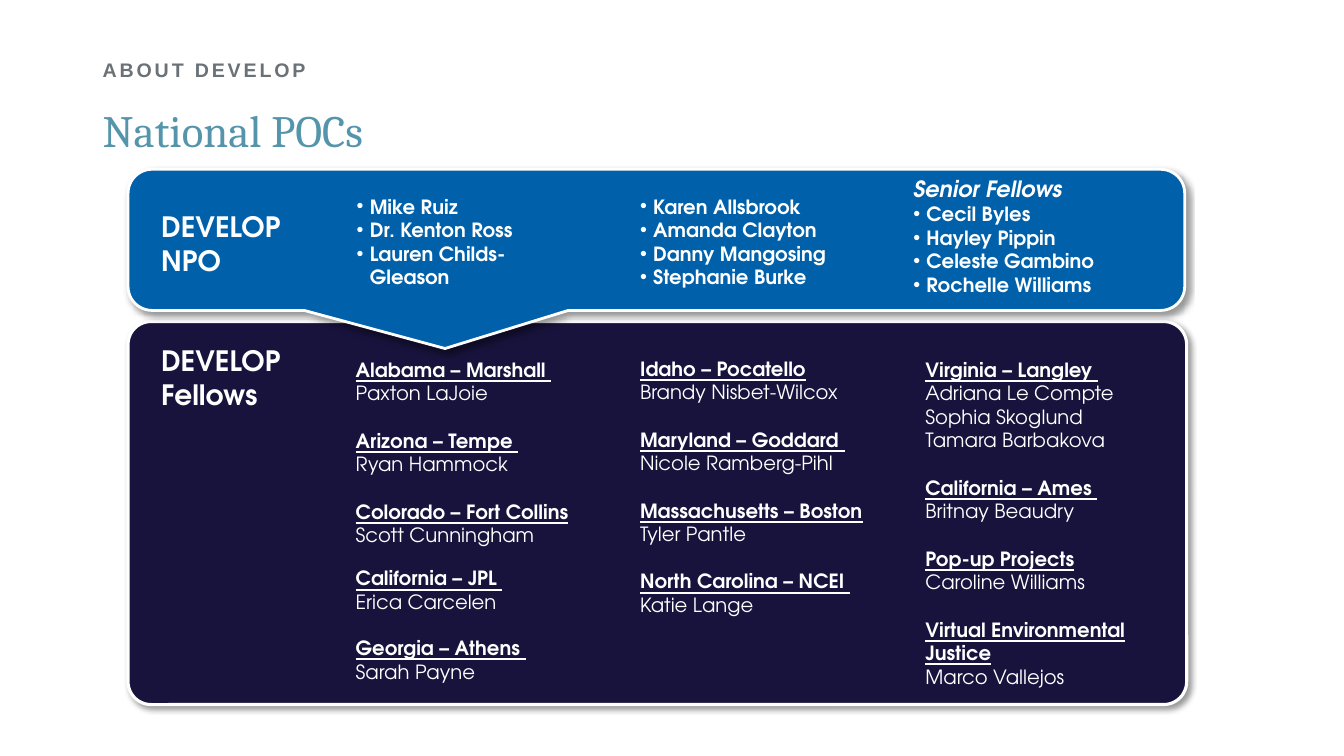
"""Build the slide of national points of contact."""
import pptx
import pptx.util
import pptx.dml.color
import pptx.enum.shapes
import pptx.enum.text
import pptx.oxml
import pptx.oxml.ns

Inches, Pt = pptx.util.Inches, pptx.util.Pt
RGB = pptx.dml.color.RGBColor.from_string
KIND = pptx.enum.shapes.MSO_SHAPE
ANCHOR = pptx.enum.text.MSO_ANCHOR
GROW = pptx.enum.text.MSO_AUTO_SIZE.SHAPE_TO_FIT_TEXT
SPACE = pptx.oxml.ns.nsdecls("a")

THEME = {
    "white": RGB("FFFFFF"), "blue": RGB("0061AA"), "navy": RGB("18133C"),
    "grey": RGB("6A7278"), "teal": RGB("5595AC"), "shade": "000000",
    "face": "TeX Gyre Adventor", "body": Pt(14), "gap": Pt(17),
}
NAME = {"name": THEME["face"], "size": THEME["body"], "bold": False}
BOLD = {**NAME, "bold": True}
HEAD = {**BOLD, "underline": True}
SENIOR = {**BOLD, "size": Pt(16), "italic": True}
LABEL = {**BOLD, "size": Pt(20)}
TOPIC = {"name": "Arial", "size": Pt(14), "bold": True}
TITLE = {"name": "Cambria", "size": Pt(32)}

deck = pptx.Presentation()
deck.slide_width, deck.slide_height = Inches(13.33), Inches(7.5)
slide = deck.slides.add_slide(deck.slide_layouts[6])


def write(place, lines, color=THEME["white"], anchor=ANCHOR.TOP):
    """Add a text box from lines of text, format, space before and bullet."""
    frame = slide.shapes.add_textbox(*map(Inches, place)).text_frame
    frame.word_wrap = True
    frame.vertical_anchor = anchor
    if anchor == ANCHOR.TOP:
        frame.auto_size = GROW
    for spot, (text, style, gap, mark) in enumerate(lines):
        para = frame.paragraphs[0] if spot == 0 else frame.add_paragraph()
        if gap:
            para.space_before = gap
        if mark:
            props = para._p.get_or_add_pPr()
            props.set("marL", str(Inches(0.13)))
            props.set("indent", str(-Inches(0.13)))
            for tag in ('buFont {} typeface="Arial"', 'buChar {} char="•"'):
                props.append(pptx.oxml.parse_xml(f"<a:{tag.format(SPACE)}/>"))
        run = para.add_run()
        run.text = text
        for key, value in style.items():
            setattr(run.font, key, value)
        run.font.color.rgb = color
    return frame


topic = write((0.92, 0.4, 11.5, 0.62), [("ABOUT DEVELOP", TOPIC, None, False)],
              THEME["grey"], ANCHOR.MIDDLE).paragraphs[0]
topic.line_spacing = 0.9
topic.runs[0].font._element.set("spc", "200")
write((0.92, 0.84, 11.71, 0.9), [("National POCs", TITLE, None, False)],
      THEME["teal"], ANCHOR.MIDDLE)

panels = [
    (KIND.ROUNDED_RECTANGLE, (1.27, 3.19, 10.5, 3.8), "navy", 2.25, [0.06]),
    (KIND.ROUNDED_RECTANGULAR_CALLOUT, (1.27, 1.68, 10.48, 1.4), "blue", 2,
     [-0.2, 0.77, 0.17]),
]
for kind, place, fill, width, bends in panels:
    panel = slide.shapes.add_shape(kind, *map(Inches, place))
    for spot, bend in enumerate(bends):
        panel.adjustments[spot] = bend
    panel.fill.solid()
    panel.fill.fore_color.rgb = THEME[fill]
    panel.line.color.rgb = THEME["white"]
    panel.line.width = Pt(width)
    panel.shadow.inherit = False
    panel._element.spPr.find(pptx.oxml.ns.qn("a:effectLst")).append(
        pptx.oxml.parse_xml(
            f'<a:outerShdw {SPACE} blurRad="{Pt(4)}" dist="{Pt(3)}" '
            f'dir="2700000" algn="tl" rotWithShape="0"><a:srgbClr '
            f'val="{THEME["shade"]}"><a:alpha val="40000"/></a:srgbClr>'
            f'</a:outerShdw>'))

write((1.5, 3.36, 2.17, 0.77), [("DEVELOP Fellows", LABEL, None, False)])
write((1.5, 2.03, 1.48, 0.77),
      [(text, LABEL, None, False) for text in ("DEVELOP", "NPO")])

staff = [
    ((3.44, 1.88, 1.96, 1.04), None,
     ["Mike Ruiz", "Dr. Kenton Ross", "Lauren Childs-Gleason"]),
    ((6.25, 1.88, 2.07, 1.04), None,
     ["Karen Allsbrook", "Amanda Clayton", "Danny Mangosing",
      "Stephanie Burke"]),
    ((8.96, 1.69, 2.57, 1.31), "Senior Fellows",
     ["Cecil Byles", "Hayley Pippin", "Celeste Gambino", "Rochelle Williams"]),
]
for place, head, names in staff:
    lines = [(head, SENIOR, None, False)] if head else []
    write(place, lines + [(name, BOLD, None, True) for name in names])

fellows = [
    ((3.43, 3.5, 2.3, 1.28), [("Alabama – Marshall ", ["Paxton LaJoie"]),
                              ("Arizona – Tempe ", ["Ryan Hammock"])]),
    ((3.43, 4.91, 2.34, 0.57),
     [("Colorado – Fort Collins", ["Scott Cunningham"])]),
    ((3.43, 5.57, 2.16, 0.6), [("California – JPL ", ["Erica Carcelen"])]),
    ((3.43, 6.26, 2.3, 0.57), [("Georgia – Athens ", ["Sarah Payne"])]),
    ((6.25, 3.49, 2.47, 2.93), [
        ("Idaho – Pocatello", ["Brandy Nisbet-Wilcox"]),
        ("Maryland – Goddard ", ["Nicole Ramberg-Pihl"]),
        ("Massachusetts – Boston", ["Tyler Pantle"]),
        ("North Carolina – NCEI ", ["Katie Lange"])]),
    ((9.08, 3.5, 2.33, 3.4), [
        ("Virginia – Langley ",
         ["Adriana Le Compte", "Sophia Skoglund", "Tamara Barbakova"]),
        ("California – Ames ", ["Britnay Beaudry"]),
        ("Pop-up Projects", ["Caroline Williams"]),
        ("Virtual Environmental Justice", ["Marco Vallejos"])]),
]
for place, sites in fellows:
    lines = []
    for site, names in sites:
        lines.append((site, HEAD, THEME["gap"] if lines else None, False))
        lines += [(name, NAME, None, False) for name in names]
    write(place, lines)

deck.save("out.pptx")
